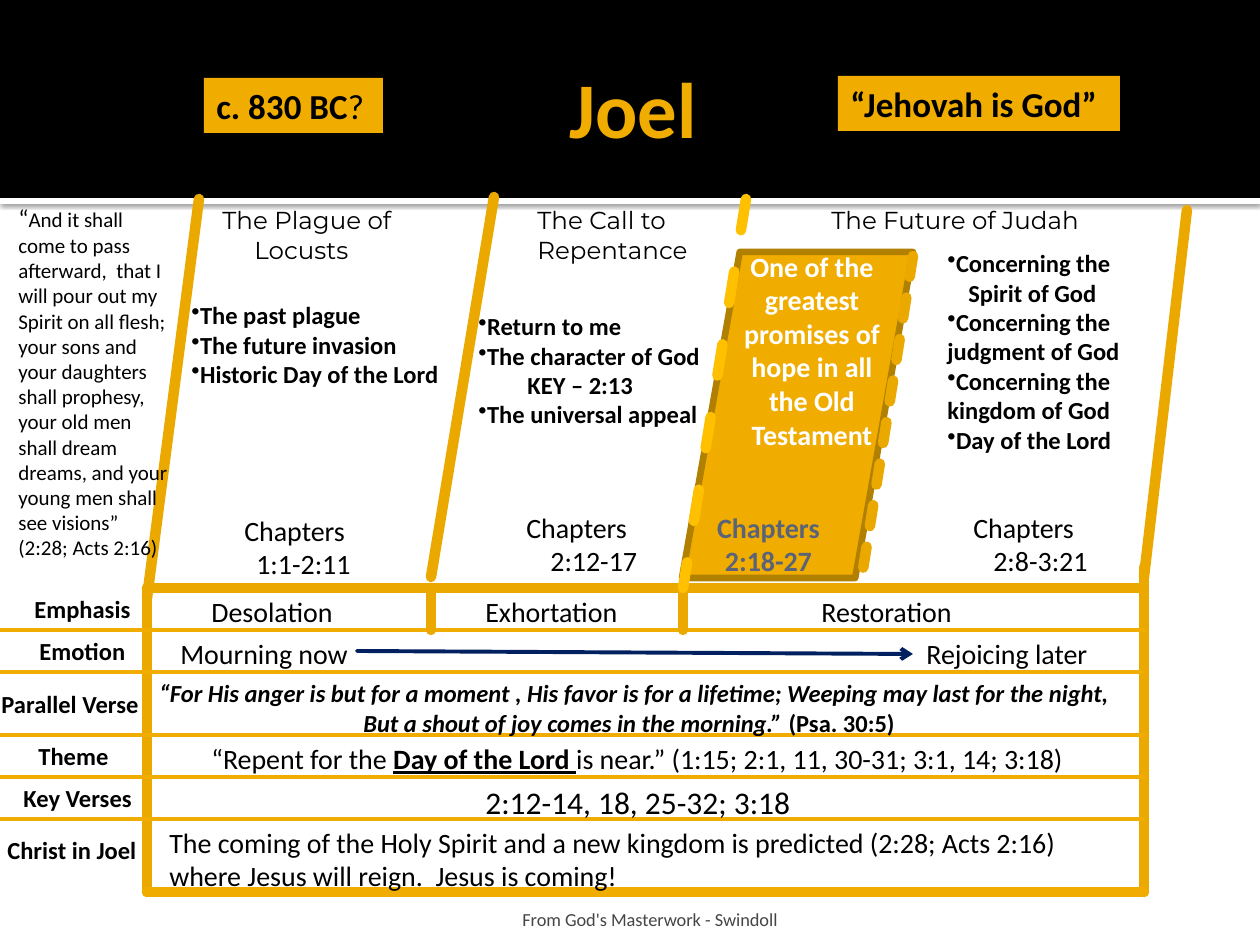
import pptx
import pptx.dml.color
import pptx.enum.dml
import pptx.enum.shapes
import pptx.enum.text
import pptx.oxml.ns
import pptx.util
import lxml.etree

PX = 914400 // 126
COLOURS = {
    "black": "000000", "white": "FFFFFF", "gold": "F0AD00", "amber": "EBA900",
    "yellow": "FFC000", "bronze": "B28000", "slate": "5A6378", "navy": "002060",
    "grey": "454545",
}
ALIGN = pptx.enum.text.PP_ALIGN
ANCHOR = pptx.enum.text.MSO_ANCHOR
DASH = pptx.enum.dml.MSO_LINE
SHAPE = pptx.enum.shapes.MSO_SHAPE


def rgb(name):
    return pptx.dml.color.RGBColor.from_string(COLOURS[name])


def child(parent, tag, **attributes):
    return lxml.etree.SubElement(parent, pptx.oxml.ns.qn(tag), attributes)


class ChartPage:
    """Draws the elements of a book chart on one slide in one style."""

    def __init__(self, deck):
        self.page = deck.slides.add_slide(deck.slide_layouts[6])
        self.font = "Calibri"

    def place(self, *lengths):
        return [pptx.util.Emu(length * PX) for length in lengths]

    def block(self, left, top, width, height, fill, line=None, kind=SHAPE.RECTANGLE):
        shape = self.page.shapes.add_shape(kind, *self.place(left, top, width, height))
        shape.shadow.inherit = False
        shape.fill.solid()
        shape.fill.fore_color.rgb = rgb(fill)
        if line:
            shape.line.color.rgb = rgb(line)
            shape.line.width = pptx.util.Pt(3.78)
        else:
            shape.line.fill.background()
        return shape

    def cast_shadow(self, shape):
        effects = shape._element.spPr.find(pptx.oxml.ns.qn("a:effectLst"))
        shadow = child(effects, "a:outerShdw", blurRad="31750", dist="10160", dir="5400000")
        child(child(shadow, "a:srgbClr", val=COLOURS["black"]), "a:alpha", val="60000")

    def line(self, x1, y1, x2, y2, colour="amber", width=6, dash=None, arrow=False):
        line = self.page.shapes.add_connector(
            pptx.enum.shapes.MSO_CONNECTOR.STRAIGHT, *self.place(x1, y1, x2, y2))
        line.line.color.rgb = rgb(colour)
        line.line.width = pptx.util.Pt(width)
        if dash:
            line.line.dash_style = dash
        stroke = line.line._get_or_add_ln()
        stroke.set("cap", "rnd")
        if arrow:
            child(stroke, "a:tailEnd", type="arrow")
        child(line._element.spPr, "a:effectLst")

    def text(self, left, top, width, height, lines, size, **style):
        box = self.page.shapes.add_textbox(*self.place(left, top, width, height))
        self.fill_text(box, lines, size, **style)

    def fill_text(self, shape, lines, size, colour="black", bold=False, italic=False, font=None,
                  align=ALIGN.LEFT, anchor=ANCHOR.TOP, indents=(), bullets=()):
        frame = shape.text_frame
        frame.word_wrap = True
        frame.vertical_anchor = anchor
        for index, content in enumerate(lines):
            para = frame.paragraphs[0] if index == 0 else frame.add_paragraph()
            para.alignment = align
            spans = [(content, {})] if isinstance(content, str) else content
            for words, special in spans:
                span = para.add_run()
                span.text = words
                span.font.name = font or self.font
                span.font.size = pptx.util.Pt(special.get("size", size))
                span.font.bold = special.get("bold", bold)
                span.font.italic = special.get("italic", italic)
                span.font.underline = special.get("underline", False)
                span.font.color.rgb = rgb(colour)
            properties = para._p.get_or_add_pPr()
            if index < len(indents):
                properties.set("marL", str(indents[index] * PX))
            if index in bullets:
                child(properties, "a:buChar", char="•")


def draw_header(chart):
    chart.cast_shadow(chart.block(0, 198, 1260, 6, "white"))
    chart.block(0, 0, 1260, 198, "black")
    chart.text(63, 21, 1140, 173, ["Joel"], 45, colour="gold", bold=True,
               align=ALIGN.CENTER, anchor=ANCHOR.MIDDLE)
    date = chart.block(204, 78, 179, 55, "gold")
    chart.fill_text(date, [[("c. 830 BC", {}), ("?", {"bold": False})]], 20, bold=True)
    name = chart.block(838, 76, 282, 55, "gold")
    chart.fill_text(name, ["“Jehovah is God”"], 20, bold=True)


def draw_frame(chart):
    left, right, top, bottom = 147, 1144, 588, 892
    chart.line(199, 199, left, 598)
    chart.line(1187, 210, right, 577)
    chart.line(left, top, right, top)
    chart.line(left, top, left, bottom)
    chart.line(right, 567, right, bottom)
    chart.line(left, bottom, right, bottom, "gold")
    for y in (630, 672, 735, 777, 819):
        chart.line(0, y, right, y, "gold", 2.25)
    chart.line(494, 197, 431, 577)
    for x in (431, 683):
        chart.line(x, top, x, 630)


def draw_sections(chart):
    chart.block(682, 252, 231, 326, "gold", "bronze", SHAPE.PARALLELOGRAM)
    chart.text(693, 504, 151, 81, ["Chapters", "2:18-27"], 16, colour="slate", bold=True,
               align=ALIGN.CENTER)
    promise = ["One of the", "greatest", "promises of", "hope in all", "the Old", "Testament"]
    chart.text(713, 243, 198, 251, promise, 16, colour="white", bold=True, align=ALIGN.CENTER)
    chart.line(746, 199, 683, 588, "yellow", dash=DASH.DASH)
    chart.line(913, 256, 861, 582, dash=DASH.SQUARE_DOT)

    for left, top, width, verses, indents in (
            (168, 507, 199, "1:1-2:11", (64, 76)),
            (494, 504, 158, "2:12-17", (20, 44)),
            (892, 504, 284, "2:8-3:21", (69, 89))):
        chart.text(left, top, width, 81, ["Chapters", verses], 16, indents=indents)

    for left, width, heading, indents in (
            (210, 244, ["The Plague of", "Locusts"], (0, 32)),
            (525, 220, ["The Call to", "Repentance"], ()),
            (819, 300, ["The Future of Judah"], ())):
        chart.text(left, 199, width, 72, heading, 14, font="Montserrat", indents=indents)

    for left, top, width, height, points, indents, bullets in (
            (179, 294, 346, 102,
             ["The past plague", "The future invasion", "Historic Day of the Lord"],
             (), (0, 1, 2)),
            (466, 305, 297, 131,
             ["Return to me", "The character of God", "KEY – 2:13", "The universal appeal"],
             (0, 0, 49), (0, 1, 3)),
            (935, 242, 242, 220,
             ["Concerning the", "Spirit of God", "Concerning the judgment of God",
              "Concerning the kingdom of God", "Day of the Lord"],
             (0, 21), (0, 2, 3, 4))):
        chart.text(left, top, width, height, points, 14, bold=True,
                   indents=indents, bullets=bullets)


def draw_rows(chart):
    for left, top, label in (
            (22, 588, "Emphasis"), (27, 630, "Emotion"), (-11, 683, "Parallel Verse"),
            (26, 735, "Theme"), (11, 777, "Key Verses"), (-5, 829, "Christ in Joel")):
        chart.text(left, top, 170, 43, [label], 14, bold=True)

    for left, top, width, entry in (
            (199, 588, 152, "Desolation"), (473, 588, 181, "Exhortation"),
            (809, 588, 161, "Restoration"), (168, 630, 217, "Mourning now"),
            (914, 630, 220, "Rejoicing later")):
        chart.text(left, top, width, 47, [entry], 16)
    chart.line(357, 651, 913, 654, "navy", 2.25, arrow=True)

    chart.text(147, 672, 998, 72, [
        "“For His anger is but for a moment , His favor is for a lifetime; "
        "Weeping may last for the night,",
        [("But a shout of joy comes in the morning.” ", {}), ("(Psa. 30:5)", {"italic": False})],
    ], 14, bold=True, italic=True, indents=(0, 204))
    chart.text(199, 735, 945, 47, [[
        ("“Repent for the ", {}), ("Day of the Lord ", {"bold": True, "underline": True}),
        ("is near.” (1:15; 2:1, 11, 30-31; 3:1, 14; 3:18)", {})]], 16)
    chart.text(473, 777, 388, 50, ["2:12-14, 18, 25-32; 3:18"], 18)
    chart.text(157, 819, 982, 81, [
        "The coming of the Holy Spirit and a new kingdom is predicted (2:28; Acts 2:16) "
        "where Jesus will reign.  Jesus is coming!"], 16)


def draw_margins(chart):
    chart.text(6, 197, 174, 398, [[("“", {"size": 14}), (
        "And it shall come to pass afterward,  that I will pour out my Spirit on all flesh; "
        "your sons and your daughters shall prophesy, your old men shall dream dreams, "
        "and your young men shall see visions” (2:28; Acts 2:16)", {})]], 12)
    chart.text(364, 898, 758, 38, ["From God's Masterwork - Swindoll"], 10.5,
               colour="grey", anchor=ANCHOR.BOTTOM, indents=(146,))


def main():
    deck = pptx.Presentation()
    deck.slide_width = pptx.util.Inches(10)
    deck.slide_height = pptx.util.Inches(7.5)
    chart = ChartPage(deck)
    for draw in (draw_header, draw_frame, draw_sections, draw_rows, draw_margins):
        draw(chart)
    deck.save("out.pptx")


if __name__ == "__main__":
    main()
